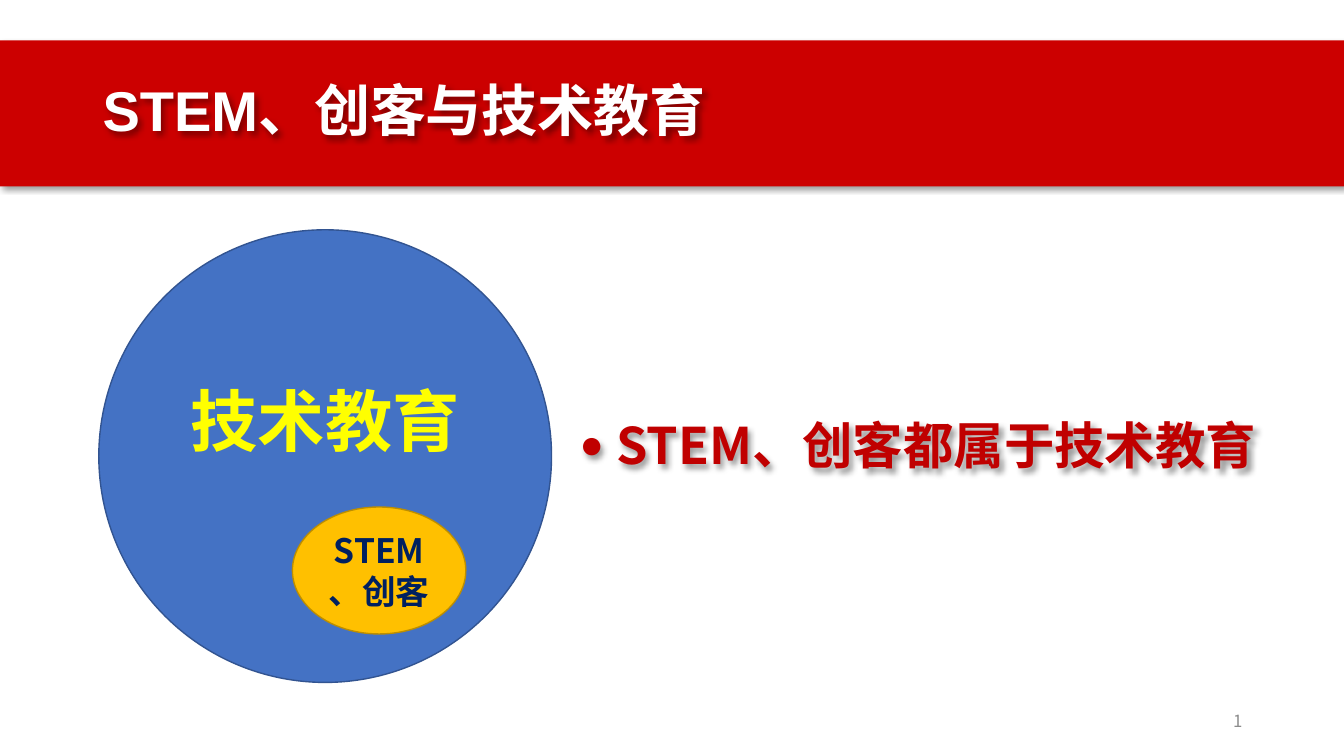
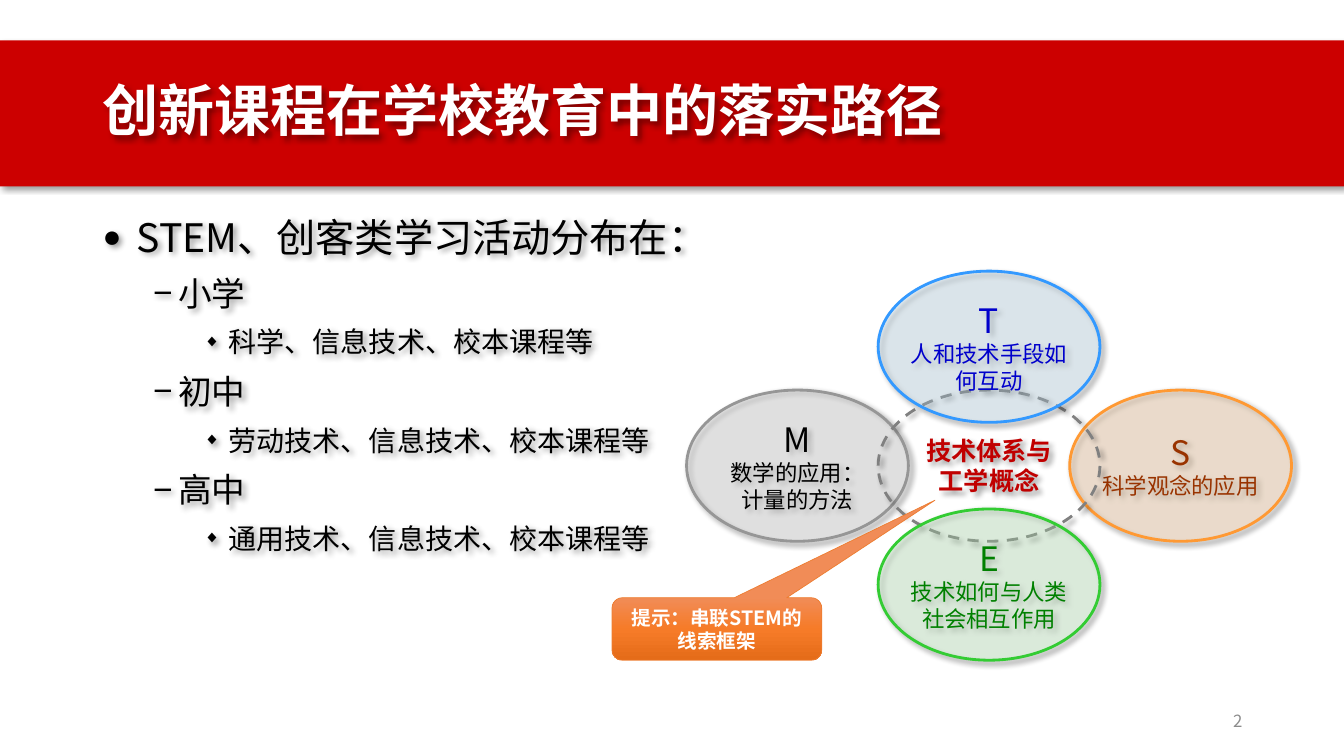
"""Build two slides on STEM, maker activities and technology education."""
from copy import deepcopy

from lxml.etree import SubElement
from pptx import Presentation
from pptx.dml.color import RGBColor
from pptx.enum.dml import MSO_LINE
from pptx.enum.shapes import MSO_SHAPE
from pptx.enum.text import MSO_ANCHOR, PP_ALIGN
from pptx.oxml.ns import qn
from pptx.util import Pt

PX = 9144
WIDTH, HEIGHT = 1333, 750
CJK_FONT = "Noto Sans CJK SC"
LATIN_FONT = "Arial"

WHITE = RGBColor(0xFF, 0xFF, 0xFF)
BLACK = RGBColor(0x00, 0x00, 0x00)
BAND_RED = RGBColor(0xCC, 0x00, 0x00)
DEEP_RED = RGBColor(0xC0, 0x00, 0x00)
NUMBER_GRAY = RGBColor(0x8C, 0x8C, 0x8C)
BLUE = RGBColor(0x44, 0x72, 0xC4)
BLUE_EDGE = RGBColor(0x32, 0x54, 0x91)
YELLOW = RGBColor(0xFF, 0xFF, 0x00)
GOLD = RGBColor(0xFF, 0xC0, 0x00)
GOLD_EDGE = RGBColor(0xBD, 0x8E, 0x00)
NAVY = RGBColor(0x00, 0x20, 0x60)
HUB_GRAY = RGBColor(0x80, 0x80, 0x80)
MATH_FILL = RGBColor(0xDD, 0xDD, 0xDD)
MATH_EDGE = RGBColor(0x96, 0x96, 0x96)
SCIENCE_FILL = RGBColor(0xFF, 0xCC, 0x99)
SCIENCE_EDGE = RGBColor(0xFF, 0x99, 0x33)
SCIENCE_TEXT = RGBColor(0x99, 0x33, 0x00)
ENGINEERING_FILL = RGBColor(0xCC, 0xFF, 0xCC)
ENGINEERING_EDGE = RGBColor(0x33, 0xCC, 0x33)
ENGINEERING_TEXT = RGBColor(0x00, 0x80, 0x00)
TECHNOLOGY_FILL = RGBColor(0xCC, 0xEC, 0xFF)
TECHNOLOGY_EDGE = RGBColor(0x33, 0x99, 0xFF)
TECHNOLOGY_TEXT = RGBColor(0x00, 0x00, 0xCC)
HINT_EDGE = RGBColor(0xED, 0x7D, 0x31)
HINT_STOPS = [(0, RGBColor(0xF1, 0x8C, 0x57)),
              (0.5, RGBColor(0xF6, 0x7B, 0x28)),
              (1, RGBColor(0xE5, 0x6C, 0x19))]

BULLETS = [("●", 80, 10), ("−", 100, 5), ("◆", 60, 5)]
INDENT, LEVEL_STEP = 25, 50


class Deck:
    """Hold the shared style and the slide being drawn."""

    def __init__(self):
        self.presentation = Presentation()
        self.presentation.slide_width = WIDTH * PX
        self.presentation.slide_height = HEIGHT * PX
        self.slide = None

    def new_slide(self, title):
        """Add a slide with its title band and page number."""
        layout = self.presentation.slide_layouts[6]
        self.slide = self.presentation.slides.add_slide(layout)
        band = self.shape(MSO_SHAPE.RECTANGLE, (0, 40, WIDTH, 145), BAND_RED)
        self.shadow(band)
        heading = self.text_box((92, 40, 1150, 145), [(title, 40)], WHITE,
                                bold=True, latin=LATIN_FONT)
        heading.text_frame.paragraphs[0].line_spacing = 0.9
        self.shadow(heading)
        self.page_number()

    def page_number(self):
        """Place the slide number as a live field."""
        number = str(len(self.presentation.slides))
        footer = self.text_box((942, 695, 300, 40), [(number, 12)],
                               NUMBER_GRAY, align=PP_ALIGN.RIGHT)
        run = footer.text_frame.paragraphs[0].runs[0]._r
        field = SubElement(run.getparent(), qn("a:fld"), type="slidenum",
                           id="{B6F15528-21DE-4FAA-801E-634DDDAF4B2B}")
        run.getparent().replace(run, field)
        field.extend(list(run))

    def text_box(self, box, lines, color, anchor=MSO_ANCHOR.MIDDLE, **style):
        """Add a wrapping text box."""
        holder = self.slide.shapes.add_textbox(*(n * PX for n in box))
        self.set_lines(holder, lines, color, anchor=anchor, **style)
        return holder

    def shape(self, kind, box, fill=None, edge=None, edge_width=1, opacity=100):
        """Add a preset shape with plain fill and outline."""
        shape = self.slide.shapes.add_shape(kind, *(n * PX for n in box))
        shape.shadow.inherit = False
        if fill is None:
            shape.fill.background()
        else:
            shape.fill.solid()
            shape.fill.fore_color.rgb = fill
            if opacity < 100:
                tint = shape._element.spPr.find(
                    qn("a:solidFill")).find(qn("a:srgbClr"))
                SubElement(tint, qn("a:alpha"), val=str(opacity * 1000))
        if edge is None:
            shape.line.fill.background()
        else:
            shape.line.color.rgb = edge
            shape.line.width = Pt(edge_width)
        return shape

    def ellipse(self, box, lines, fill, edge, color, bold=False,
                insets=(10, 5, 10, 5)):
        """Add a solid ellipse with centred text."""
        ellipse = self.shape(MSO_SHAPE.OVAL, box, fill, edge)
        self.set_lines(ellipse, lines, color, bold, PP_ALIGN.CENTER,
                       insets=insets)

    def petal(self, box, lines, fill, edge, color):
        """Add a translucent ellipse with a shadow and centred text."""
        petal = self.shape(MSO_SHAPE.OVAL, box, fill, edge, 2, 30)
        self.shadow(petal)
        self.set_lines(petal, lines, color, align=PP_ALIGN.CENTER,
                       insets=(0, 5, 0, 5))

    def hub(self, box, lines, edge, color):
        """Add an unfilled dashed ellipse with a shadow."""
        hub = self.shape(MSO_SHAPE.OVAL, box, None, edge, 2)
        hub.line.dash_style = MSO_LINE.DASH
        self.shadow(hub)
        self.set_lines(hub, lines, color, True, PP_ALIGN.CENTER)

    def callout(self, box, lines, pointer):
        """Add a gradient callout pointing at a relative offset."""
        callout = self.shape(MSO_SHAPE.ROUNDED_RECTANGULAR_CALLOUT, box,
                             edge=HINT_EDGE, edge_width=0.5)
        for index, offset in enumerate(pointer):
            callout.adjustments[index] = offset
        callout.fill.gradient()
        callout.fill.gradient_angle = 270
        stops = callout._element.spPr.find(qn("a:gradFill")).find(qn("a:gsLst"))
        stops.append(deepcopy(stops[-1]))
        for stop, (position, color) in zip(callout.fill.gradient_stops,
                                           HINT_STOPS):
            stop.position = position
            stop.color.rgb = color
        self.set_lines(callout, lines, WHITE, True, PP_ALIGN.CENTER)

    def outline(self, box, items, color, bold=False):
        """Add a shadowed bullet list of (level, text, size) items."""
        body = self.text_box(box, [item[1:] for item in items], color,
                             MSO_ANCHOR.TOP, bold=bold)
        self.shadow(body)
        for index, (level, _, _) in enumerate(items):
            paragraph = body.text_frame.paragraphs[index]
            mark, percent, gap = BULLETS[level]
            properties = paragraph._p.get_or_add_pPr()
            properties.set("marL", str((INDENT + LEVEL_STEP * level) * PX))
            properties.set("indent", str(-INDENT * PX))
            SubElement(properties, qn("a:buSzPct"), val=str(percent * 1000))
            SubElement(properties, qn("a:buFont"), typeface=LATIN_FONT)
            SubElement(properties, qn("a:buChar"), char=mark)
            paragraph.level = level
            paragraph.line_spacing = 1.14
            if index:
                paragraph.space_before = Pt(gap)

    def set_lines(self, holder, lines, color, bold=False, align=PP_ALIGN.LEFT,
                  anchor=MSO_ANCHOR.MIDDLE, insets=(10, 5, 10, 5),
                  latin=CJK_FONT):
        """Set (text, size) lines and format their runs."""
        frame = holder.text_frame
        frame.word_wrap = True
        frame.vertical_anchor = anchor
        (frame.margin_left, frame.margin_top,
         frame.margin_right, frame.margin_bottom) = (n * PX for n in insets)
        frame.text = "\n".join(text for text, _ in lines)
        for paragraph, (_, size) in zip(frame.paragraphs, lines):
            paragraph.alignment = align
            for run in paragraph.runs:
                run.font.size = Pt(size)
                run.font.bold = bold
                run.font.color.rgb = color
                run.font.name = latin
                SubElement(run._r.get_or_add_rPr(), qn("a:ea"),
                           typeface=CJK_FONT)

    def shadow(self, shape):
        """Give a shape the soft shadow shared by all slides."""
        shape.shadow.inherit = False
        effects = shape._element.spPr.find(qn("a:effectLst"))
        outer = SubElement(effects, qn("a:outerShdw"), blurRad=str(Pt(4)),
                           dist=str(Pt(3)), dir="2700000", algn="tl",
                           rotWithShape="0")
        tint = SubElement(outer, qn("a:srgbClr"), val=str(BLACK))
        SubElement(tint, qn("a:alpha"), val="40000")


def relation_slide(deck):
    """Draw STEM and maker work inside technology education."""
    deck.new_slide("STEM、创客与技术教育")
    deck.outline((565, 398, 720, 89), [(0, " STEM、创客都属于技术教育", 36)],
                 DEEP_RED, bold=True)
    deck.ellipse((98, 228, 449, 449), [("技术教育", 48)], BLUE, BLUE_EDGE,
                 YELLOW, True, (10, 5, 10, 77))
    deck.ellipse((290, 503, 172, 126), [("STEM、创客", 24)], GOLD, GOLD_EDGE,
                 NAVY, True, (4, 4, 4, 4))


def pathway_slide(deck):
    """Draw the school stages and the four STEM petals."""
    deck.new_slide("创新课程在学校教育中的落实路径")
    stages = [("小学", "科学"), ("初中", "劳动技术"), ("高中", "通用技术")]
    items = [(0, " STEM、创客类学习活动分布在：", 28)]
    for stage, subject in stages:
        items += [(1, stage, 24), (2, f"{subject}、信息技术、校本课程等", 20)]
    deck.outline((92, 200, 649, 435), items, BLACK)

    hub_left, hub_top, petal_width, petal_height = 871, 387, 220, 150
    across, down = 190, 118

    def place(column, row):
        return (hub_left + column * across, hub_top + row * down,
                petal_width, petal_height)

    def petal(column, row, letter, meanings, *colors):
        lines = [(letter, 24)] + [(meaning, 16) for meaning in meanings]
        deck.petal(place(column, row), lines, *colors)

    petal(-1, 0, "M", ["数学的应用：", "计量的方法"],
          MATH_FILL, MATH_EDGE, BLACK)
    petal(1, 0, "S", ["科学观念的应用"],
          SCIENCE_FILL, SCIENCE_EDGE, SCIENCE_TEXT)
    deck.hub(place(0, 0), [("技术体系与工学概念", 18)], HUB_GRAY, DEEP_RED)
    petal(0, 1, "E", ["技术如何与人类社会相互作用"],
          ENGINEERING_FILL, ENGINEERING_EDGE, ENGINEERING_TEXT)
    petal(0, -1, "T", ["人和技术手段如何互动"],
          TECHNOLOGY_FILL, TECHNOLOGY_EDGE, TECHNOLOGY_TEXT)
    deck.callout((607, 593, 208, 62), [("提示：串联STEM的线索框架", 14)],
                 (1.04, -2.06))


def main():
    """Build and save the deck."""
    deck = Deck()
    relation_slide(deck)
    pathway_slide(deck)
    deck.presentation.save("out.pptx")


if __name__ == "__main__":
    main()
